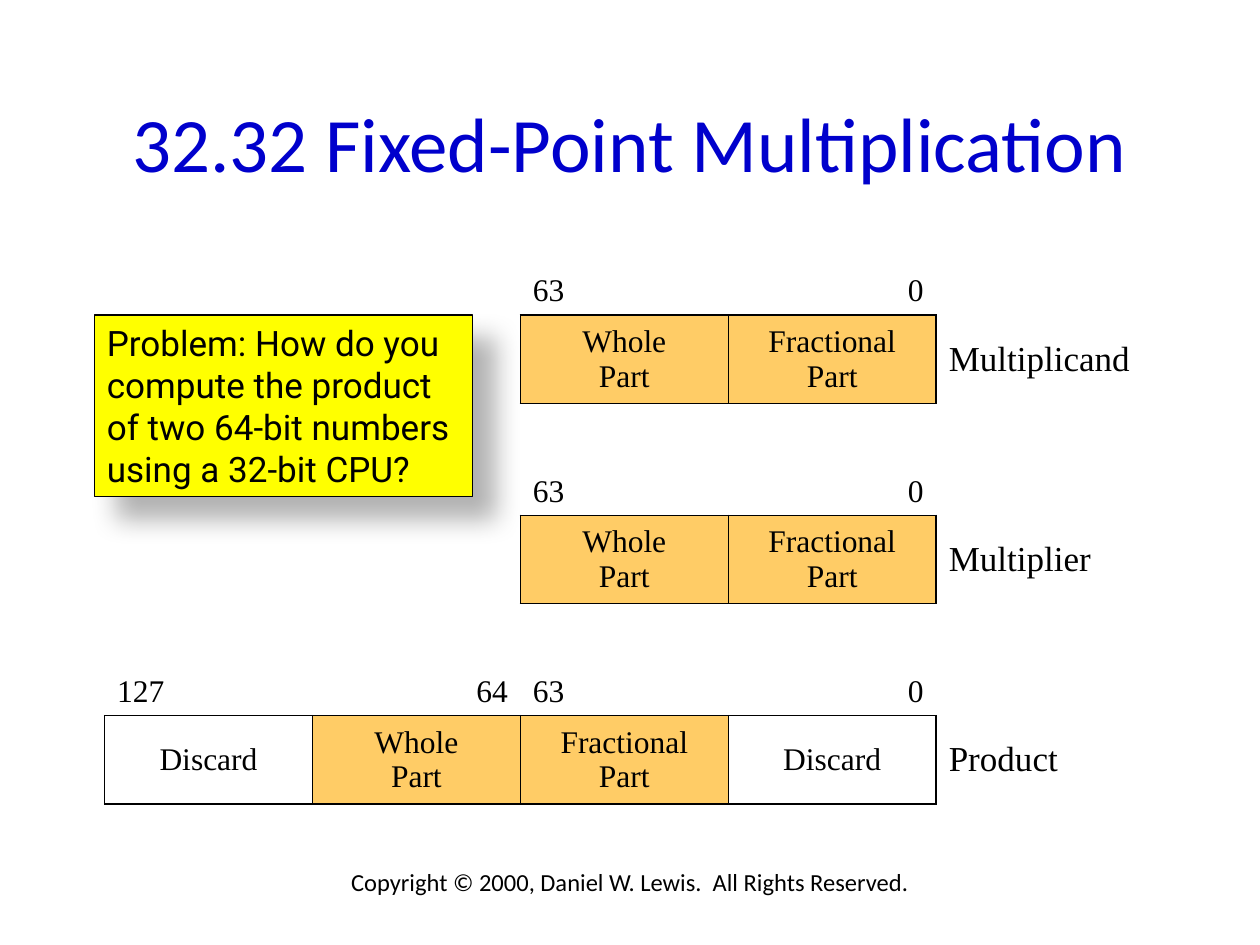
from lxml.etree import SubElement
from pptx import Presentation
from pptx.dml.color import RGBColor
from pptx.enum.shapes import MSO_SHAPE
from pptx.enum.text import MSO_ANCHOR, PP_ALIGN
from pptx.oxml import parse_xml
from pptx.oxml.ns import nsdecls, qn
from pptx.util import Inches, Pt

COLORS = {
    "title": "0000CC",
    "ink": "000000",
    "part": "FFCC66",
    "note": "FFFF00",
}
NO_GRID_STYLE = "{2D5ABB26-0587-4C30-8999-92F81FD0307C}"
NEIGHBOURS = {"L": (0, -1), "R": (0, 1), "T": (-1, 0), "B": (1, 0)}

WHOLE, FRACTION, DISCARD = "Whole\vPart", "Fractional\vPart", "Discard"
BOXES = (WHOLE, FRACTION, DISCARD)
OPERANDS = ["Multiplicand", "Multiplier"]
REGISTERS = []
for operand in OPERANDS:
    REGISTERS += [["", "", "63", "0", ""], ["", "", WHOLE, FRACTION, operand]]
REGISTERS += [
    ["127", "64", "63", "0", ""],
    [DISCARD, WHOLE, FRACTION, DISCARD, "Product"],
]


def rgb(name):
    return RGBColor.from_string(COLORS[name])


class Deck:
    def __init__(self):
        self.presentation = Presentation()
        self.presentation.slide_width = Inches(10)
        self.presentation.slide_height = Inches(7.5)
        self.slide = self.presentation.slides.add_slide(
            self.presentation.slide_layouts[5]
        )

    def set_text(self, frame, text, size, font, color="ink", align=PP_ALIGN.LEFT):
        frame.word_wrap = True
        frame.text = text
        paragraph = frame.paragraphs[0]
        paragraph.alignment = align
        for run in paragraph.runs:
            run.font.size = Pt(size)
            run.font.name = font
            run.font.color.rgb = rgb(color)

    def title(self, text, left, top, width, height):
        heading = self.slide.shapes.title
        heading.left, heading.top = Inches(left), Inches(top)
        heading.width, heading.height = Inches(width), Inches(height)
        heading.text_frame.vertical_anchor = MSO_ANCHOR.MIDDLE
        self.set_text(heading.text_frame, text, 44, "Calibri", "title", PP_ALIGN.CENTER)

    def caption(self, text, left, top, width, height):
        notice = self.slide.shapes.add_textbox(
            Inches(left), Inches(top), Inches(width), Inches(height)
        )
        self.set_text(notice.text_frame, text, 14, "Calibri", align=PP_ALIGN.CENTER)

    def note(self, text, left, top, width, height):
        problem = self.slide.shapes.add_shape(
            MSO_SHAPE.RECTANGLE,
            Inches(left), Inches(top), Inches(width), Inches(height),
        )
        problem.fill.solid()
        problem.fill.fore_color.rgb = rgb("note")
        problem.line.color.rgb = rgb("ink")
        problem.line.width = Pt(0.75)
        problem.text_frame.vertical_anchor = MSO_ANCHOR.TOP
        self.set_text(problem.text_frame, text, 20, "Roboto")
        self.drop_shadow(problem)

    def drop_shadow(self, shape):
        shape.shadow.inherit = False
        effects = shape._element.spPr.find(qn("a:effectLst"))
        shadow = SubElement(
            effects, qn("a:outerShdw"),
            blurRad=str(Pt(15)), dist=str(Pt(18)), dir="2700000",
            algn="tl", rotWithShape="0",
        )
        shade = SubElement(shadow, qn("a:srgbClr"), val=COLORS["ink"])
        SubElement(shade, qn("a:alpha"), val="30000")

    def registers(self, rows, left, top, column_width, row_heights):
        columns = len(rows[0])
        table = self.slide.shapes.add_table(
            len(rows), columns, Inches(left), Inches(top),
            Inches(column_width * columns), Inches(sum(row_heights)),
        ).table
        table.first_row = table.horz_banding = False
        table._tbl.tblPr.find(qn("a:tableStyleId")).text = NO_GRID_STYLE
        for column in table.columns:
            column.width = Inches(column_width)
        for row, height in zip(table.rows, row_heights):
            row.height = Inches(height)
        boxes = {
            (r, c)
            for r, row in enumerate(rows)
            for c, text in enumerate(row)
            if text in BOXES
        }
        for r, row in enumerate(rows):
            for c, text in enumerate(row):
                sides = [
                    side for side, (down, right) in NEIGHBOURS.items()
                    if boxes & {(r, c), (r + down, c + right)}
                ]
                self.register_cell(table.cell(r, c), text, c, sides)

    def register_cell(self, cell, text, column, sides):
        if text in (WHOLE, FRACTION):
            cell.fill.solid()
            cell.fill.fore_color.rgb = rgb("part")
        else:
            cell.fill.background()
        is_bit = text.isdigit()
        if text in BOXES:
            align = PP_ALIGN.CENTER
        elif is_bit and column % 2:
            align = PP_ALIGN.RIGHT
        else:
            align = PP_ALIGN.LEFT
        cell.vertical_anchor = MSO_ANCHOR.BOTTOM if is_bit else MSO_ANCHOR.MIDDLE
        size = 18 if is_bit or text in BOXES else 20
        self.set_text(cell.text_frame, text, size, "Times New Roman", align=align)
        properties = cell._tc.get_or_add_tcPr()
        for position, side in enumerate(sides):
            properties.insert(position, parse_xml(
                f'<a:ln{side} {nsdecls("a")} w="{Pt(1)}"><a:solidFill>'
                f'<a:srgbClr val="{COLORS["ink"]}"/></a:solidFill></a:ln{side}>'
            ))


def main():
    deck = Deck()
    deck.caption(
        "Copyright © 2000, Daniel W. Lewis.  All Rights Reserved.",
        0.75, 6.83, 8.5, 0.5,
    )
    deck.title("32.32 Fixed-Point Multiplication", 0.75, 0.5, 8.5, 1.25)
    deck.registers(REGISTERS, 0.83, 1.92, 1.65, [0.58, 0.65, 0.89, 0.65, 0.89, 0.65])
    deck.note(
        "Problem: How do you compute the product of two 64-bit numbers "
        "using a 32-bit CPU?",
        0.75, 2.5, 3, 1.44,
    )
    deck.presentation.save("out.pptx")


if __name__ == "__main__":
    main()
